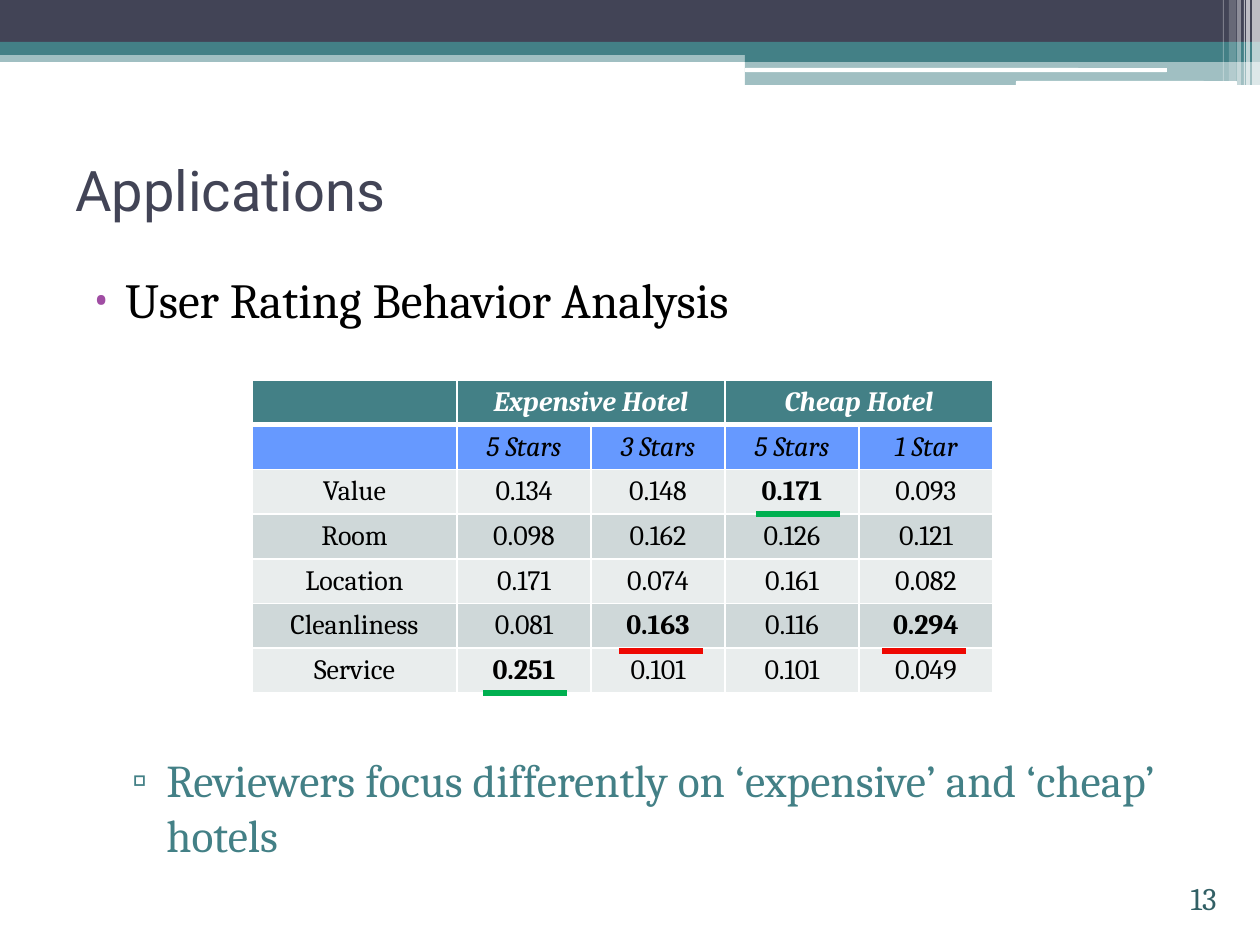
from dataclasses import dataclass

from pptx import Presentation
from pptx.dml.color import RGBColor
from pptx.enum.shapes import MSO_CONNECTOR, MSO_SHAPE
from pptx.enum.text import MSO_ANCHOR, PP_ALIGN
from pptx.oxml import parse_xml
from pptx.oxml.ns import nsdecls, qn
from pptx.oxml.xmlchemy import OxmlElement
from pptx.util import Pt

EMU_PER_PX = 914400 / 126


@dataclass(frozen=True)
class Theme:
    navy: str = "424456"
    teal: str = "438086"
    dark_teal: str = "326065"
    purple: str = "A04DA3"
    blue: str = "6699FF"
    light_band: str = "E9EDED"
    dark_band: str = "CFD8D9"
    green: str = "00B050"
    red: str = "EE0802"
    white: str = "FFFFFF"
    black: str = "000000"
    heading_font: str = "Roboto"
    body_font: str = "Cambria"
    title_size: int = 32
    bullet_size: int = 28
    sub_bullet_size: int = 26
    number_size: int = 18
    table_size: int = 16


def px(length):
    return round(length * EMU_PER_PX)


def write(para, text, *, font, size, color, bold=False, italic=False, align=None):
    para.alignment = align
    span = para.add_run()
    span.text = text
    span.font.name = font
    span.font.size = Pt(size)
    span.font.bold = bold
    span.font.italic = italic
    span.font.color.rgb = RGBColor.from_string(color)


def add_bullet(para, font, mark, color, percent, margin, hanging):
    properties = para._p.get_or_add_pPr()
    properties.set("marL", str(px(margin)))
    properties.set("indent", str(-px(hanging)))
    for element in (f'<a:buClr {nsdecls("a")}><a:srgbClr val="{color}"/></a:buClr>',
                    f'<a:buSzPct {nsdecls("a")} val="{percent * 1000}"/>',
                    f'<a:buFont {nsdecls("a")} typeface="{font}"/>',
                    f'<a:buChar {nsdecls("a")} char="{mark}"/>'):
        properties.append(parse_xml(element))


def set_borders(cell, color, **widths):
    """Draw cell borders; widths in points are keyed by side: L, R, T, B."""
    properties = cell._tc.get_or_add_tcPr()
    for side, width in widths.items():
        properties.append(parse_xml(
            f'<a:ln{side} {nsdecls("a")} w="{Pt(width)}"><a:solidFill>'
            f'<a:srgbClr val="{color}"/></a:solidFill></a:ln{side}>'))


class SlideBuilder:
    def __init__(self, page, theme):
        self.page = page
        self.theme = theme

    def bar(self, left, top, width, height, color, opacity=100, rounded=False):
        kind = MSO_SHAPE.ROUNDED_RECTANGLE if rounded else MSO_SHAPE.RECTANGLE
        shape = self.page.shapes.add_shape(kind, px(left), px(top), px(width), px(height))
        shape.shadow.inherit = False
        shape.line.fill.background()
        shape.fill.solid()
        shape.fill.fore_color.rgb = RGBColor.from_string(color)
        if opacity < 100:
            alpha = OxmlElement("a:alpha")
            alpha.set("val", str(opacity * 1000))
            shape.element.spPr.find(".//" + qn("a:srgbClr")).append(alpha)

    def text(self, left, top, width, height, text, *, anchor=MSO_ANCHOR.TOP,
             bullet=None, **style):
        box = self.page.shapes.add_textbox(px(left), px(top), px(width), px(height))
        frame = box.text_frame
        frame.word_wrap = True
        frame.vertical_anchor = anchor
        para = frame.paragraphs[0]
        if bullet:
            add_bullet(para, style["font"], *bullet)
        write(para, text, **style)

    def table(self, left, top, widths, height, rows, bold_cells):
        """Add a table with two header rows; None continues the cell to its left."""
        theme = self.theme
        frame = self.page.shapes.add_table(
            len(rows), len(widths), px(left), px(top), px(sum(widths)), px(height))
        table = frame.table
        table.first_row = table.horz_banding = False
        for column, width in zip(table.columns, widths):
            column.width = px(width)
        for row_index, values in enumerate(rows):
            if row_index < 2:
                fill = (theme.teal, theme.blue)[row_index]
            else:
                fill = (theme.light_band, theme.dark_band)[row_index % 2]
            for column_index, value in enumerate(values):
                cell = table.cell(row_index, column_index)
                set_borders(cell, theme.white, L=1, R=1,
                            T=3 if row_index == 1 else 1,
                            B=3 if row_index == 0 else 1)
                cell.fill.solid()
                cell.fill.fore_color.rgb = RGBColor.from_string(fill)
                cell.vertical_anchor = MSO_ANCHOR.MIDDLE
                cell.margin_top = cell.margin_bottom = px(3 if value else 0)
                if not value:
                    continue
                write(cell.text_frame.paragraphs[0], value,
                      font=theme.body_font, size=theme.table_size,
                      color=theme.white if row_index == 0 else theme.black,
                      bold=row_index == 0 or (row_index, column_index) in bold_cells,
                      italic=row_index < 2, align=PP_ALIGN.CENTER)
            for column_index, value in enumerate(values):
                if value is None:
                    table.cell(row_index, column_index - 1).merge(
                        table.cell(row_index, column_index))

    def underline(self, left, top, length, color):
        line = self.page.shapes.add_connector(
            MSO_CONNECTOR.STRAIGHT, px(left), px(top), px(left + length), px(top))
        line.line.color.rgb = RGBColor.from_string(color)
        line.line.width = Pt(3)
        line._element.spPr.append(OxmlElement("a:effectLst"))


def draw_banner(builder):
    theme = builder.theme
    builder.bar(0, 50, 1260, 12, theme.teal, 50)
    builder.bar(0, 0, 1260, 42, theme.navy)
    builder.bar(0, 42, 1260, 13, theme.teal)
    builder.bar(745, 49, 515, 13, theme.teal)
    builder.bar(745, 61, 515, 24, theme.teal, 50)
    builder.bar(745, 68, 422, 4, theme.white, rounded=True)
    builder.bar(1016, 81, 221, 5, theme.white, rounded=True)
    stripes = [(1252, 8, 85, 65), (1246, 4, 85, 65), (1244, 1, 85, 60),
               (1237, 4, 85, 40), (1229, 7, 81, 20), (1223, 1, 81, 30)]
    for left, width, height, opacity in stripes:
        builder.bar(left, 0, width, height, theme.white, opacity)


def draw_ratings(builder):
    theme = builder.theme
    rows = [
        ("", "Expensive Hotel", None, "Cheap Hotel", None),
        ("", "5 Stars", "3 Stars", "5 Stars", "1 Star"),
        ("Value", "0.134", "0.148", "0.171", "0.093"),
        ("Room", "0.098", "0.162", "0.126", "0.121"),
        ("Location", "0.171", "0.074", "0.161", "0.082"),
        ("Cleanliness", "0.081", "0.163", "0.116", "0.294"),
        ("Service", "0.251", "0.101", "0.101", "0.049"),
    ]
    builder.table(252, 380, [205] + [134] * 4, 313, rows,
                  bold_cells={(2, 3), (5, 2), (5, 4), (6, 1)})
    for left, top, color in [(483, 693, theme.green), (619, 651, theme.red),
                             (756, 514, theme.green), (882, 651, theme.red)]:
        builder.underline(left, top, 84, color)


def main():
    deck = Presentation()
    deck.slide_width, deck.slide_height = px(1260), px(945)
    theme = Theme()
    builder = SlideBuilder(deck.slides.add_slide(deck.slide_layouts[6]), theme)
    draw_banner(builder)
    builder.text(63, 116, 1134, 147, "Applications", anchor=MSO_ANCHOR.MIDDLE,
                 font=theme.heading_font, size=theme.title_size, color=theme.navy)
    builder.text(63, 263, 1134, 70, "User Rating Behavior Analysis",
                 bullet=("•", theme.purple, 100, 50, 35),
                 font=theme.body_font, size=theme.bullet_size, color=theme.black)
    draw_ratings(builder)
    builder.text(63, 746, 1134, 120,
                 "Reviewers focus differently on ‘expensive’ and ‘cheap’ hotels",
                 bullet=("▫", theme.teal, 80, 91, 34),
                 font=theme.body_font, size=theme.sub_bullet_size, color=theme.teal)
    builder.text(1124, 873, 105, 50, "13", anchor=MSO_ANCHOR.BOTTOM,
                 font=theme.body_font, size=theme.number_size,
                 color=theme.dark_teal, align=PP_ALIGN.RIGHT)
    deck.save("out.pptx")


if __name__ == "__main__":
    main()
